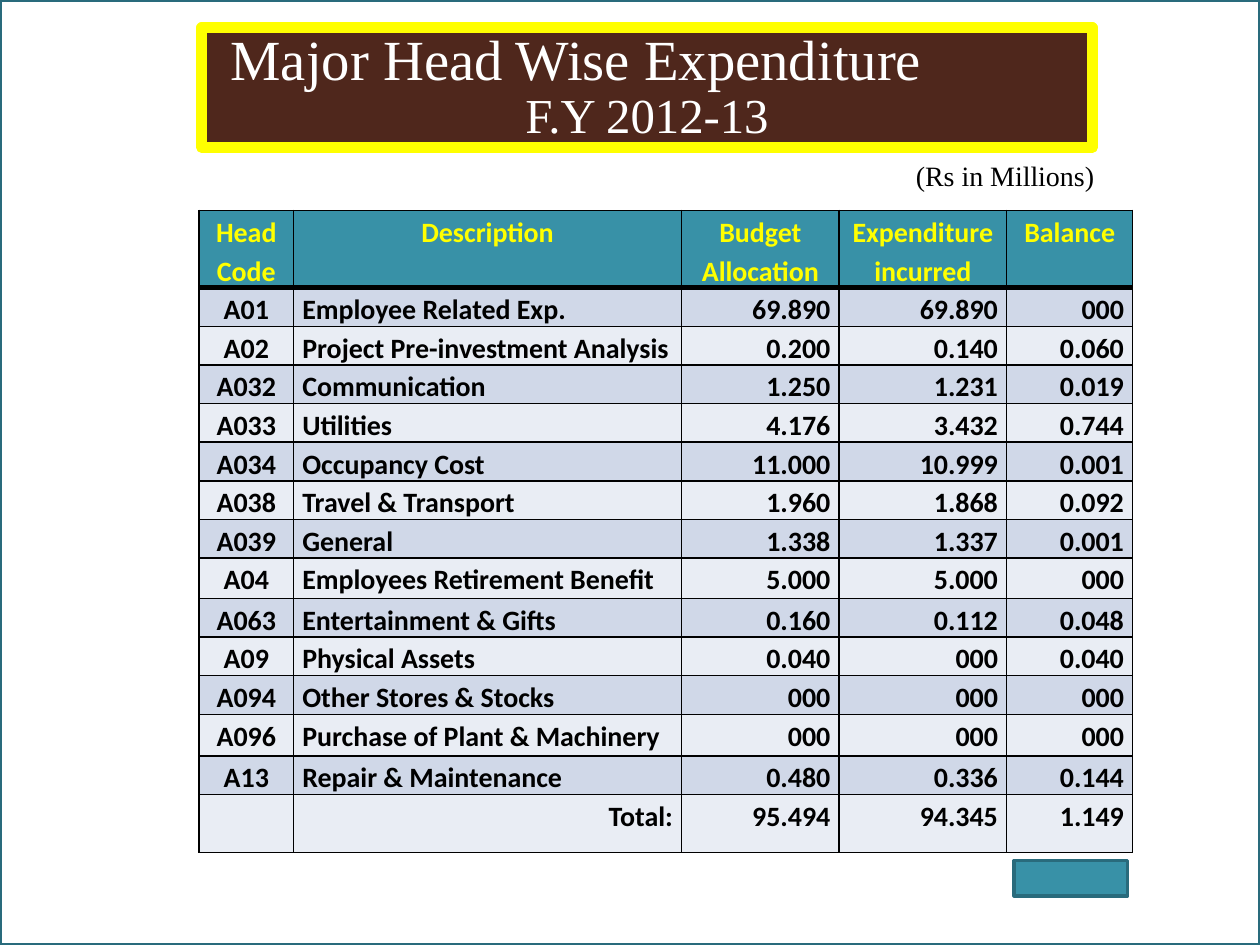
from lxml import etree
from pptx import Presentation
from pptx.dml.color import RGBColor
from pptx.enum.shapes import MSO_SHAPE
from pptx.enum.text import MSO_ANCHOR, MSO_AUTO_SIZE, PP_ALIGN
from pptx.oxml.ns import qn
from pptx.util import Inches, Pt

RECTANGLE = MSO_SHAPE.RECTANGLE
MIDDLE = MSO_ANCHOR.MIDDLE
NO_AUTOFIT = MSO_AUTO_SIZE.NONE
LEFT, CENTER, RIGHT = PP_ALIGN.LEFT, PP_ALIGN.CENTER, PP_ALIGN.RIGHT

COLORS = {
    "white": "FFFFFF", "black": "000000", "yellow": "FFFF00", "brown": "4F271C",
    "teal": "3891A7", "dark_teal": "296B7C", "band_dark": "D0D8E8", "band_light": "E9EDF4",
}
SERIF, SANS = "Times New Roman", "Calibri"


def add_run(paragraph, text, size, font, color, bold=False):
    run = paragraph.add_run()
    run.text = text
    run.font.size = Pt(size)
    run.font.name = font
    run.font.bold = bold
    run.font.color.rgb = RGBColor.from_string(COLORS[color])


def paint(shape, fill, line, width):
    shape.fill.solid()
    shape.fill.fore_color.rgb = RGBColor.from_string(COLORS[fill])
    shape.line.color.rgb = RGBColor.from_string(COLORS[line])
    shape.line.width = Pt(width)
    shape.shadow.inherit = False


prs = Presentation()
prs.slide_width, prs.slide_height = Inches(10), Inches(7.5)
slide = prs.slides.add_slide(prs.slide_layouts[5])
title = slide.shapes.title

# Frame around the whole slide, behind the title
frame = slide.shapes.add_shape(RECTANGLE, 0, 0, prs.slide_width, prs.slide_height)
paint(frame, "white", "dark_teal", 2)
title._element.addprevious(frame._element)

# Title: heading indented at the left, year centred and set close below it
title.left, title.top = Inches(1.6), Inches(0.22)
title.width, title.height = Inches(7.07), Inches(0.95)
paint(title, "brown", "yellow", 6)
title_text = title.text_frame
title_text.auto_size = NO_AUTOFIT
title_text.vertical_anchor = MIDDLE
title_text.margin_top, title_text.margin_bottom = Inches(0.05), Inches(0.11)
heading, year = title_text.paragraphs[0], title_text.add_paragraph()
for line, alignment, indent in ((heading, LEFT, 0.13), (year, CENTER, 0)):
    line.alignment = alignment
    line.space_before = Pt(0)
    properties = line._p.get_or_add_pPr()
    properties.set("marL", str(Inches(indent)))
    properties.set("indent", "0")
year.line_spacing = 0.9
add_run(heading, "Major Head Wise Expenditure", 32.4, SERIF, "white")
add_run(year, "F.Y 2012-13", 27.9, SERIF, "white")

# Unit note
unit = slide.shapes.add_textbox(Inches(7.17), Inches(1.21), Inches(1.75), Inches(0.37))
unit.text_frame.word_wrap = True
add_run(unit.text_frame.paragraphs[0], "(Rs in Millions)", 16, SERIF, "black")

# Expenditure table
rows = [
    ("Head Code", "Description", "Budget Allocation", "Expenditure incurred", "Balance"),
    ("A01", "Employee Related Exp.", "69.890", "69.890", "000"),
    ("A02", "Project Pre-investment Analysis", "0.200", "0.140", "0.060"),
    ("A032", "Communication", "1.250", "1.231", "0.019"),
    ("A033", "Utilities", "4.176", "3.432", "0.744"),
    ("A034", "Occupancy Cost", "11.000", "10.999", "0.001"),
    ("A038", "Travel & Transport", "1.960", "1.868", "0.092"),
    ("A039", "General", "1.338", "1.337", "0.001"),
    ("A04", "Employees Retirement Benefit", "5.000", "5.000", "000"),
    ("A063", "Entertainment & Gifts", "0.160", "0.112", "0.048"),
    ("A09", "Physical Assets", "0.040", "000", "0.040"),
    ("A094", "Other Stores & Stocks", "000", "000", "000"),
    ("A096", "Purchase of Plant & Machinery", "000", "000", "000"),
    ("A13", "Repair & Maintenance", "0.480", "0.336", "0.144"),
    ("", "Total:", "95.494", "94.345", "1.149"),
]
column_widths = [0.75, 3.08, 1.25, 1.33, 1]
column_alignments = [CENTER, LEFT, RIGHT, RIGHT, RIGHT]
total_row = len(rows) - 1
special_heights = {0: 0.46, 2: 0.24, 8: 0.32, 12: 0.33, total_row: 0.46}

table = slide.shapes.add_table(len(rows), len(column_widths), Inches(1.58), Inches(1.67),
                               Inches(7.42), Inches(5.1)).table
for column, width in zip(table.columns, column_widths):
    column.width = Inches(width)

for r, row in enumerate(rows):
    table.rows[r].height = Inches(special_heights.get(r, 0.3))
    band = "teal" if r == 0 else "band_dark" if r % 2 else "band_light"
    for c, value in enumerate(row):
        cell = table.cell(r, c)
        cell.margin_left = cell.margin_right = Inches(0.07)
        cell.margin_top = cell.margin_bottom = 0

        # Borders, with a heavy rule under the header
        for side in ("lnL", "lnR", "lnT", "lnB"):
            heavy = (r, side) in ((0, "lnB"), (1, "lnT"))
            border = etree.SubElement(cell._tc.get_or_add_tcPr(), qn(f"a:{side}"),
                                      w=str(Pt(3 if heavy else 1)))
            border_fill = etree.SubElement(border, qn("a:solidFill"))
            etree.SubElement(border_fill, qn("a:srgbClr"), val=COLORS["black"])
        cell.fill.solid()
        cell.fill.fore_color.rgb = RGBColor.from_string(COLORS[band])

        if value:
            entry = cell.text_frame.paragraphs[0]
            entry.line_spacing = 1.15
            if r == 0:
                entry.alignment = CENTER
            elif r == total_row:
                entry.alignment = RIGHT
            else:
                entry.alignment = column_alignments[c]
            add_run(entry, value, 16, SANS, "yellow" if r == 0 else "black", bold=True)

# Button below the table
button = slide.shapes.add_shape(RECTANGLE, Inches(8.05), Inches(6.83), Inches(0.9), Inches(0.28))
paint(button, "teal", "dark_teal", 2)

prs.save("out.pptx")
